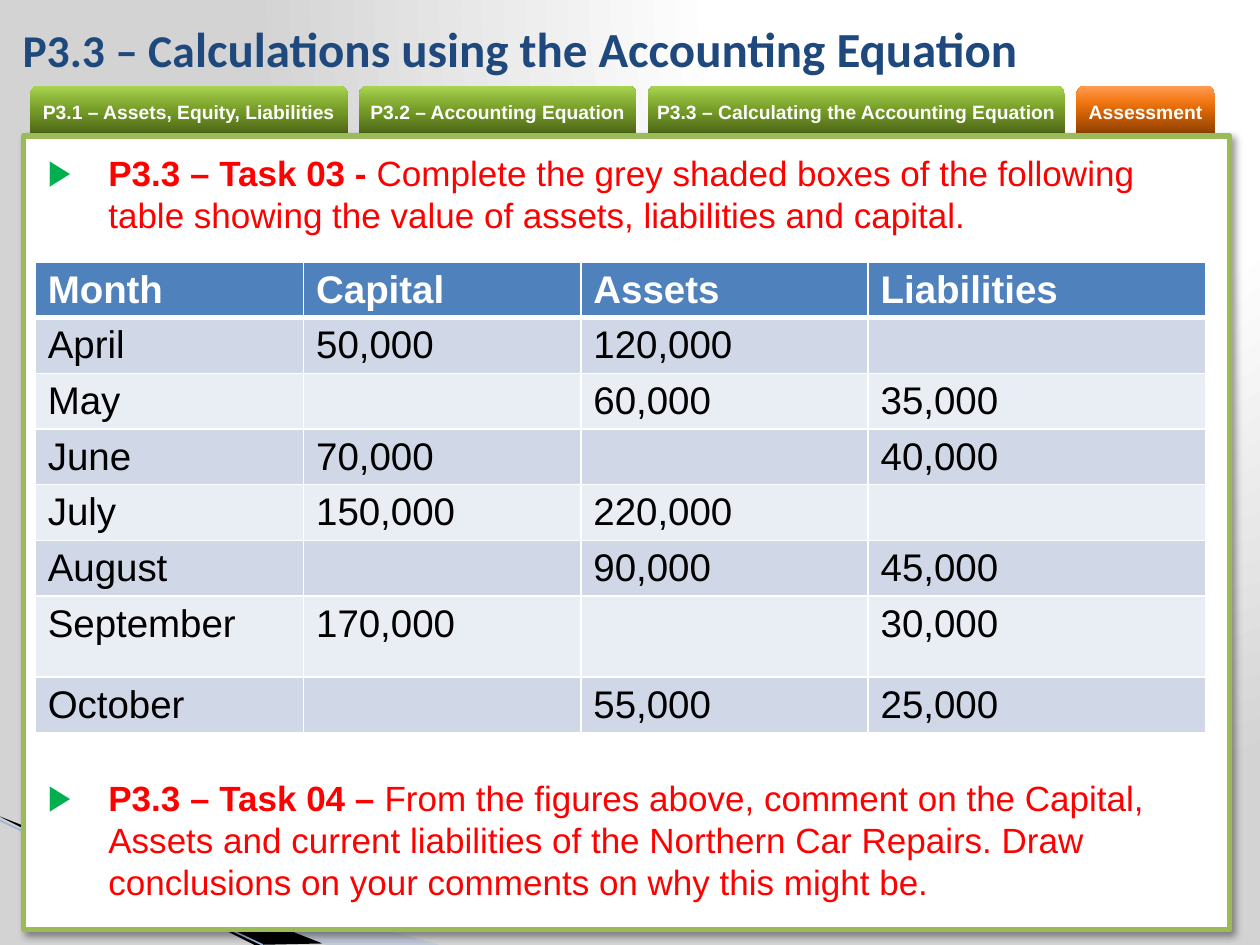
from dataclasses import dataclass

from lxml import etree
from pptx import Presentation
from pptx import oxml
from pptx import util as u
from pptx.dml.color import RGBColor
from pptx.enum import shapes, text
from pptx.oxml import ns

WHITE = RGBColor(0xFF, 0xFF, 0xFF)
BLACK = RGBColor(0, 0, 0)
SILVER = RGBColor(0xD3, 0xD3, 0xD3)
RED = RGBColor(0xFF, 0, 0)
NAVY = RGBColor(0x1F, 0x49, 0x7D)
BULLET_GREEN = RGBColor(0x00, 0xB0, 0x50)
FRAME_GREEN = RGBColor(0x9B, 0xBB, 0x59)
SWOOSH_BLUE = RGBColor(0xA7, 0xB9, 0xDB)
EDGE_BLUE = RGBColor(0x9E, 0xB3, 0xD6)
HEADER_BLUE = RGBColor(0x4F, 0x81, 0xBD)
BANDS = (RGBColor(0xD0, 0xD8, 0xE8), RGBColor(0xE9, 0xED, 0xF4))
TAB_POSITIONS = (0, 50, 70, 100)
GREENS = tuple(map(RGBColor.from_string, ("4A6316", "769C27", "89B137", "A9D651")))
ORANGES = tuple(map(RGBColor.from_string, ("8B3F00", "DA6606", "F47917", "FF9C54")))
ARIAL = "Arial"


@dataclass
class Tab:
    label: str
    width: float
    colors: tuple


@dataclass
class Task:
    heading: str
    wording: str
    top: float
    height: float


TABS = [
    Tab("P3.1 – Assets, Equity, Liabilities", 6.4, GREENS),
    Tab("P3.2 – Accounting Equation", 5.59, GREENS),
    Tab("P3.3 – Calculating the Accounting Equation", 8.41, GREENS),
    Tab("Assessment", 2.79, ORANGES),
]
TASKS = [
    Task("P3.3 – Task 03 - ",
         "Complete the grey shaded boxes of the following table showing "
         "the value of assets, liabilities and capital.", 2.92, 1.96),
    Task("P3.3 – Task 04 – ",
         "From the figures above, comment on the Capital, Assets and current "
         "liabilities of the Northern Car Repairs. Draw conclusions on your "
         "comments on why this might be.", 15.52, 2.82),
]
ACCOUNTS = [
    ("Month", "Capital", "Assets", "Liabilities"),
    ("April", "50,000", "120,000", ""),
    ("May", "", "60,000", "35,000"),
    ("June", "70,000", "", "40,000"),
    ("July", "150,000", "220,000", ""),
    ("August", "", "90,000", "45,000"),
    ("September", "170,000", "", "30,000"),
    ("October", "", "55,000", "25,000"),
]
COLUMN_WIDTHS = (5.41, 5.59, 5.79, 6.81)
ROW_HEIGHTS = (0.91,) * 6 + (1.63, 0.91)


def gradient(positions: tuple, colors: tuple, direction: str):
    stops = "".join(
        f'<a:gs pos="{position * 1000}"><a:srgbClr val="{color}"/></a:gs>'
        for position, color in zip(positions, colors))
    return oxml.parse_xml(
        f'<a:gradFill {ns.nsdecls("a")} rotWithShape="1">'
        f'<a:gsLst>{stops}</a:gsLst>{direction}</a:gradFill>')


def place(shape, left: float, top: float, width: float, height: float) -> None:
    shape.left, shape.top = u.Cm(left), u.Cm(top)
    shape.width, shape.height = u.Cm(width), u.Cm(height)


def add_run(paragraph, wording: str, size: float, color: RGBColor,
            bold: bool = False, font: str = ARIAL) -> None:
    run = paragraph.add_run()
    run.text = wording
    run.font.name, run.font.size, run.font.bold = font, u.Pt(size), bold
    run.font.color.rgb = color


def draw_background(slide) -> None:
    glow = ('<a:path path="circle">'
            '<a:fillToRect l="65000" t="0" r="0" b="98000"/></a:path>')
    background = oxml.parse_xml(
        f'<p:bg {ns.nsdecls("p", "a")}><p:bgPr><a:effectLst/></p:bgPr></p:bg>')
    background[0].insert(0, gradient((0, 40, 100), (WHITE, WHITE, SILVER), glow))
    slide.element.cSld.insert(0, background)


def draw_swoosh(slide, points: list, color: RGBColor, alpha: int = 100) -> None:
    start, *rest = [(u.Cm(x), u.Cm(y)) for x, y in points]
    builder = slide.shapes.build_freeform(*start)
    builder.add_line_segments(rest, close=True)
    swoosh = builder.convert_to_shape()
    swoosh.shadow.inherit = False
    swoosh.line.fill.background()
    swoosh.fill.solid()
    swoosh.fill.fore_color.rgb = color
    if alpha < 100:
        tint = swoosh.element.spPr.find(".//" + ns.qn("a:srgbClr"))
        etree.SubElement(tint, ns.qn("a:alpha"), val=str(alpha * 1000))


def draw_edge(slide) -> None:
    edge = slide.shapes.add_connector(
        shapes.MSO_CONNECTOR.STRAIGHT, u.Cm(0), u.Cm(16.54), u.Cm(5.3), u.Cm(19.05))
    edge.line.color.rgb = EDGE_BLUE
    edge.line.width = u.Pt(0.95)
    etree.SubElement(edge.element.spPr, ns.qn("a:effectLst"))


def draw_tab(slide, tab: Tab, left: float) -> None:
    button = slide.shapes.add_shape(
        shapes.MSO_SHAPE.ROUND_2_SAME_RECTANGLE,
        u.Cm(left), u.Cm(1.73), u.Cm(tab.width), u.Cm(0.99))
    button.shadow.inherit = False
    button.line.fill.background()
    button.element.spPr.insert(
        2, gradient(TAB_POSITIONS, tab.colors, '<a:lin ang="16200000" scaled="0"/>'))
    frame = button.text_frame
    frame.margin_left = frame.margin_right = frame.margin_top = frame.margin_bottom = 0
    frame.vertical_anchor = text.MSO_ANCHOR.MIDDLE
    frame.word_wrap = True
    frame.paragraphs[0].alignment = text.PP_ALIGN.CENTER
    add_run(frame.paragraphs[0], tab.label, 11, WHITE, bold=True)


def draw_panel(slide) -> None:
    panel = slide.shapes.add_shape(
        shapes.MSO_SHAPE.RECTANGLE, u.Cm(0.48), u.Cm(2.74), u.Cm(24.31), u.Cm(16))
    panel.fill.solid()
    panel.fill.fore_color.rgb = WHITE
    panel.line.color.rgb = FRAME_GREEN
    panel.line.width = u.Pt(3)
    panel.shadow.inherit = False
    effects = panel.element.spPr.find(ns.qn("a:effectLst"))
    effects.append(oxml.parse_xml(
        f'<a:outerShdw {ns.nsdecls("a")} blurRad="{u.Pt(4)}" dist="{u.Pt(3)}" '
        f'dir="2700000" algn="tl" rotWithShape="0"><a:srgbClr val="{BLACK}">'
        '<a:alpha val="40000"/></a:srgbClr></a:outerShdw>'))


def fill_title(title) -> None:
    place(title, 0.2, 0.2, 24.61, 1.52)
    title.text_frame.vertical_anchor = text.MSO_ANCHOR.MIDDLE
    title.text_frame.auto_size = text.MSO_AUTO_SIZE.NONE
    heading = title.text_frame.paragraphs[0]
    heading.alignment = text.PP_ALIGN.LEFT
    add_run(heading, "P3.3 – Ca", 26, NAVY, True, "Calibri")
    add_run(heading, "lculations using the Accounting Equation", 28, NAVY, True, "Calibri")


def fill_task(body, task: Task) -> None:
    place(body, 0.71, task.top, 23.6, task.height)
    body.text_frame.auto_size = text.MSO_AUTO_SIZE.NONE
    paragraph = body.text_frame.paragraphs[0]
    properties = paragraph._p.get_or_add_pPr()
    properties.set("marL", str(u.Cm(1.22)))
    properties.set("indent", str(-u.Cm(1.22)))
    bullet_color = etree.SubElement(properties, ns.qn("a:buClr"))
    etree.SubElement(bullet_color, ns.qn("a:srgbClr"), val=str(BULLET_GREEN))
    etree.SubElement(properties, ns.qn("a:buFont"), typeface=ARIAL)
    etree.SubElement(properties, ns.qn("a:buChar"), char="▶")
    paragraph.space_before = u.Pt(0)
    add_run(paragraph, task.heading, 20, RED, bold=True)
    add_run(paragraph, task.wording, 20, RED)


def format_cell(cell, row: int) -> None:
    cell.fill.solid()
    cell.fill.fore_color.rgb = BANDS[(row - 1) % 2] if row else HEADER_BLUE
    widths = {"L": 1, "R": 1, "T": 3 if row == 1 else 1, "B": 1 if row else 3}
    for index, (side, width) in enumerate(widths.items()):
        cell._tc.tcPr.insert(index, oxml.parse_xml(
            f'<a:ln{side} {ns.nsdecls("a")} w="{u.Pt(width)}"><a:solidFill>'
            f'<a:srgbClr val="{WHITE}"/></a:solidFill></a:ln{side}>'))


def draw_accounts(slide) -> None:
    table = slide.shapes.add_table(
        len(ACCOUNTS), len(COLUMN_WIDTHS), u.Cm(0.71), u.Cm(5.28),
        u.Cm(sum(COLUMN_WIDTHS)), u.Cm(sum(ROW_HEIGHTS))).table
    for column, width in zip(table.columns, COLUMN_WIDTHS):
        column.width = u.Cm(width)
    for row, (entries, height) in enumerate(zip(ACCOUNTS, ROW_HEIGHTS)):
        table.rows[row].height = u.Cm(height)
        for column, entry in enumerate(entries):
            cell = table.cell(row, column)
            format_cell(cell, row)
            if entry:
                add_run(cell.text_frame.paragraphs[0], entry, 22,
                        BLACK if row else WHITE, bold=row == 0)


def main() -> None:
    deck = Presentation()
    deck.slide_width, deck.slide_height = u.Cm(25.4), u.Cm(19.05)
    slide = deck.slides.add_slide(deck.slide_layouts[3])
    title, *bodies = slide.placeholders
    draw_background(slide)
    draw_swoosh(slide, [(0, 16.5), (8.86, 19.05), (6.58, 19.05), (0, 16.48)], SWOOSH_BLUE, 40)
    draw_swoosh(slide, [(0, 16.46), (6.5, 19.02), (5.13, 19.05), (0.03, 16.48)], BLACK)
    draw_edge(slide)
    left = 0.61
    for tab in TABS:
        draw_tab(slide, tab, left)
        left += tab.width + 0.23
    draw_panel(slide)
    fill_title(title)
    for body, task in zip(bodies, TASKS):
        fill_task(body, task)
    for placeholder in (title, *bodies):
        slide.shapes.element.append(placeholder.element)
    draw_accounts(slide)
    deck.save("out.pptx")


if __name__ == "__main__":
    main()
